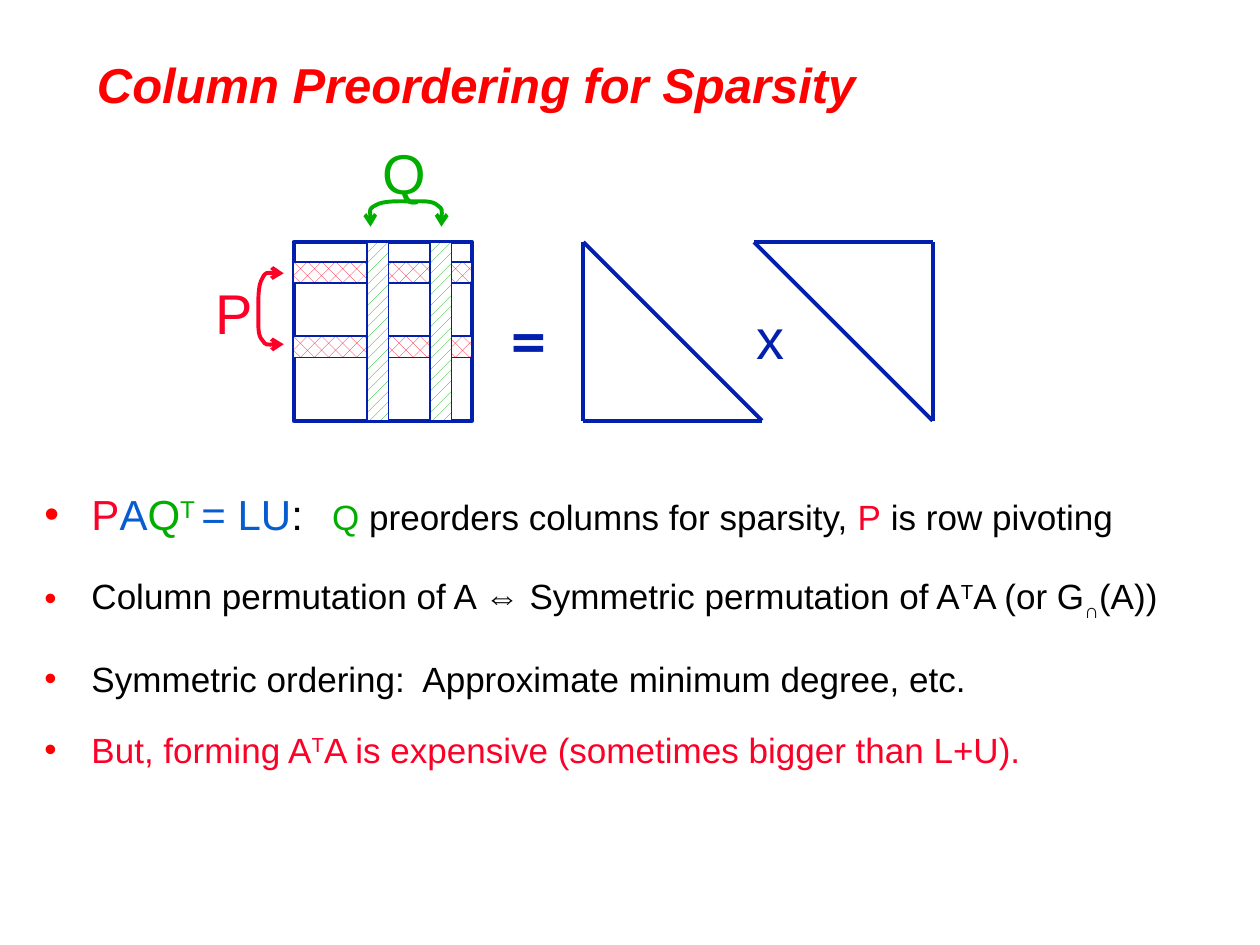
"""Build the slide on column preordering for sparse LU factorisation."""
from lxml.etree import SubElement
from pptx import Presentation
from pptx.dml.color import RGBColor
from pptx.enum.dml import MSO_PATTERN as PATTERN
from pptx.enum.shapes import MSO_CONNECTOR as CONNECTOR, MSO_SHAPE as SHAPE
from pptx.enum.text import MSO_ANCHOR as ANCHOR, MSO_AUTO_SIZE as AUTO, PP_ALIGN as ALIGN
from pptx.oxml.ns import qn
from pptx.util import Cm, Pt

BLUE, RED, GREEN, BLACK = "021FAE", "FC0128", "00AE00", "000000"
BRIGHT_RED, SKY = "FF0000", "075DCF"
BRACKET = [(0, 0), (-0.02, 0.18), (-0.04, 0.36), (0.1, 0.43), (0.25, 0.53),
           (0.6, 0.51), (0.82, 0.51), (1.04, 0.51), (1.25, 0.53),
           (1.35, 0.43), (1.46, 0.36), (1.45, 0.18), (1.43, 0)]
SUP, SUB = 30000, -25000
BULLETS = [
    (4.8, [("P", RED, 24), ("A", SKY, 24), ("Q", GREEN, 24), ("T ", GREEN, 24, SUP),
           ("= LU", SKY, 24), (":", BLACK, 24), (" ", BLACK, 20, 0, 1110),
           ("Q", GREEN), (" preorders columns for sparsity, ", BLACK),
           ("P", RED), (" is row pivoting", BLACK)]),
    (20.2, [("Column permutation of A ⇔ Symmetric permutation of A", BLACK),
            ("T", BLACK, 20, SUP), ("A (or G", BLACK), ("∩", BLACK, 20, SUB),
            ("(A))", BLACK)]),
    (20.2, [("Symmetric ordering:  Approximate minimum degree, etc.", BLACK)]),
    (16.2, [("But, forming A", RED), ("T", RED, 20, SUP),
            ("A is expensive (sometimes bigger than L+U).", RED)]),
]


def rgb(value):
    return RGBColor.from_string(value)


class Sheet:
    def __init__(self, slide, font="Arial", weight=2.25):
        self.s, self.font, self.weight = slide, font, weight

    def run(self, p, text, color=BLACK, size=20, base=0, spacing=0, bold=False, font=None):
        r = p.add_run()
        r.text = text
        r.font.name = font or self.font
        r.font.size, r.font.bold = Pt(size), bold
        r.font.color.rgb = rgb(color)
        for key, value in (("baseline", base), ("spc", spacing)):
            if value:
                r._r.get_or_add_rPr().set(key, str(value))
        return r

    def place(self, sp, x, y, w, h):
        sp.left, sp.top, sp.width, sp.height = Cm(x), Cm(y), Cm(w), Cm(h)
        sp.text_frame.auto_size = AUTO.NONE
        return sp.text_frame

    def title(self, text, *box):
        tf = self.place(self.s.shapes.title, *box)
        tf.vertical_anchor = ANCHOR.MIDDLE
        p = tf.paragraphs[0]
        p.alignment = ALIGN.LEFT
        self.run(p, text, BRIGHT_RED, 28, bold=True).font.italic = True

    def body(self, items, *box):
        tf = self.place(self.s.placeholders[1], *box)
        for i, (space, runs) in enumerate(items):
            p = tf.add_paragraph() if i else tf.paragraphs[0]
            p.space_before = Pt(space)
            pPr = p._p.get_or_add_pPr()
            pPr.set("marL", str(Cm(0.95)))
            pPr.set("indent", str(Cm(-0.95)))
            SubElement(SubElement(pPr, qn("a:buClr")), qn("a:srgbClr"), val=BRIGHT_RED)
            SubElement(pPr, qn("a:buFont"), typeface=self.font)
            SubElement(pPr, qn("a:buChar"), char="•")
            for item in runs:
                self.run(p, *item, bold=item[0] == "∩")

    def label(self, text, color, x, y, w, h=1.6, size=32, **style):
        tf = self.s.shapes.add_textbox(Cm(x), Cm(y), Cm(w), Cm(h)).text_frame
        tf.word_wrap, tf.auto_size = False, AUTO.SHAPE_TO_FIT_TEXT
        self.run(tf.paragraphs[0], text, color, size, **style)

    def stroke(self, line, color, weight=None):
        line.color.rgb = rgb(color)
        line.width = Pt(weight or self.weight)

    def rect(self, x, y, w, h, weight=None, pattern=None, color=None, turn=0):
        sp = self.s.shapes.add_shape(SHAPE.RECTANGLE, Cm(x), Cm(y), Cm(w), Cm(h))
        sp.shadow.inherit = False
        sp.rotation = turn
        if pattern:
            sp.fill.patterned()
            sp.fill.pattern = pattern
            sp.fill.fore_color.rgb, sp.fill.back_color.rgb = rgb(color), rgb("FFFFFF")
        else:
            sp.fill.background()
        self.stroke(sp.line, BLUE, weight)

    def triangle(self, *corners):
        for a, b in zip(corners, corners[1:] + corners[:1]):
            c = self.s.shapes.add_connector(CONNECTOR.STRAIGHT, *map(Cm, a + b))
            SubElement(c.element.spPr, qn("a:effectLst"))
            self.stroke(c.line, BLUE)

    def bracket(self, points, color):
        start, *rest = [(Cm(x), Cm(y)) for x, y in points]
        builder = self.s.shapes.build_freeform(*start)
        builder.add_line_segments(rest, close=False)
        sp = builder.convert_to_shape()
        sp.shadow.inherit = False
        sp.fill.background()
        self.stroke(sp.line, color)
        outline = next(sp.element.iter(qn("a:path")))
        segments = outline.findall(qn("a:lnTo"))
        for i in range(0, len(segments), 3):
            curve = SubElement(outline, qn("a:cubicBezTo"))
            for segment in segments[i:i + 3]:
                curve.append(segment[0])
                outline.remove(segment)
        ln = sp.element.spPr.find(qn("a:ln"))
        for end in ("a:headEnd", "a:tailEnd"):
            SubElement(ln, qn(end), type="arrow")


def main():
    prs = Presentation()
    prs.slide_width, prs.slide_height = Cm(25.4), Cm(19.05)
    sheet = Sheet(prs.slides.add_slide(prs.slide_layouts[1]))
    sheet.title("Column Preordering for Sparsity", 1.7, 0.84, 20.8, 1.7)
    sheet.body(BULLETS, 0.64, 9.73, 24.13, 6.99)

    left, top, side, band = 5.92, 4.88, 3.6, 0.43
    bottom, lower, upper = top + side, 11.76, 18.8
    sheet.rect(left, top, side, side)
    sheet.triangle((lower, top), (lower, bottom), (lower + side, bottom))
    sheet.triangle((upper, bottom), (upper, top), (upper - side, top))
    sheet.label("=", BLUE, 10.03, 5.89, 1.24, 1.78, 36, bold=True, font="Cambria")
    sheet.label("x", BLUE, 15.01, 5.99, 1.07)
    sheet.label("P", RED, 4.09, 5.49, 1.27)
    sheet.bracket([(5.72 - depth, 5.51 + along) for along, depth in BRACKET], RED)
    sheet.bracket([(7.47 + along, 4.57 - depth) for along, depth in BRACKET], GREEN)
    sheet.label("Q", GREEN, 7.47, 2.67, 1.4)
    for y in (6.78, 5.28):
        sheet.rect(left, y, side, band, 1, PATTERN.PERCENT_25, RED)
    for center in (8.89, 7.62):
        sheet.rect(center - side / 2, top + (side - band) / 2, side, band, 1,
                   PATTERN.PERCENT_20, GREEN, 270)
    prs.save("out.pptx")


if __name__ == "__main__":
    main()
